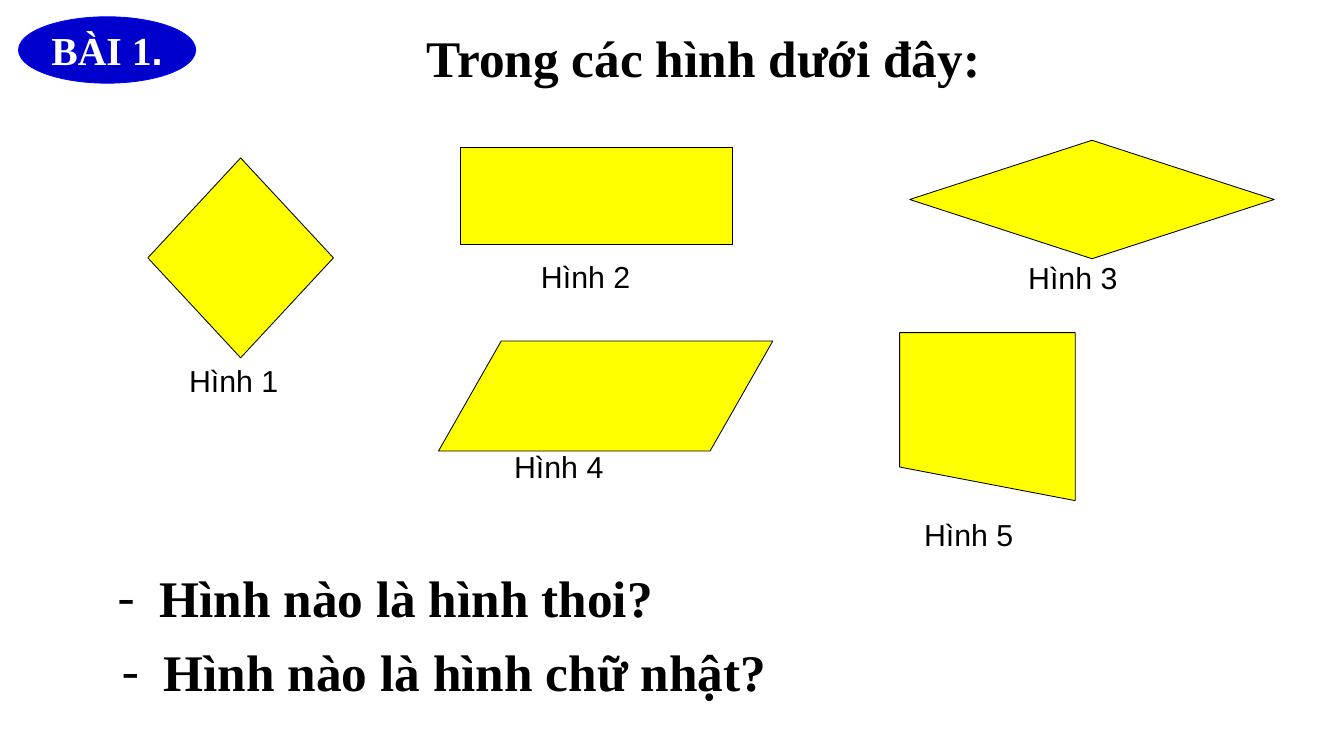
from lxml.etree import SubElement
from pptx import Presentation
from pptx.dml.color import RGBColor
from pptx.enum.shapes import MSO_SHAPE
from pptx.enum.text import MSO_ANCHOR, PP_ALIGN
from pptx.oxml.ns import qn
from pptx.util import Inches, Pt

COLORS = {"figure": "FFFF00", "ink": "000000", "badge": "0000CC",
          "badge_edge": "0000FF", "badge_text": "FFFFFF"}
FORMATS = {
    "label": {"size": Pt(26), "name": "Arial", "bold": False},
    "heading": {"size": Pt(44), "name": "Times New Roman", "bold": True},
    "badge": {"size": Pt(34), "name": "Times New Roman", "bold": True},
    "badge_dot": {"size": Pt(34), "name": "Arial", "bold": True},
}
MARGINS = {"margin_left": Inches(0.14), "margin_right": Inches(0.14),
           "margin_top": Inches(0.07), "margin_bottom": Inches(0.07)}


def set_all(target, values):
    for name, value in values.items():
        setattr(target, name, value)


class LessonSlide:
    """Holds the style and the current slide."""

    def __init__(self, deck):
        self.slide = deck.slides.add_slide(deck.slide_layouts[6])

    def color(self, name):
        return RGBColor.from_string(COLORS[name])

    def figure(self, kind, place, fill="figure", edge="ink"):
        figure = self.slide.shapes.add_shape(kind, *map(Inches, place))
        figure.shadow.inherit = False
        figure.fill.solid()
        figure.fill.fore_color.rgb = self.color(fill)
        figure.line.color.rgb = self.color(edge)
        figure.line.width = Pt(0.75)
        return figure

    def fill_text(self, frame, runs, align=PP_ALIGN.LEFT, ink="ink", wrap=True):
        """Fill a text frame with one paragraph of (text, format name) runs."""
        set_all(frame, {**MARGINS, "word_wrap": wrap})
        paragraph = frame.paragraphs[0]
        paragraph.alignment = align
        for text, style in runs:
            run = paragraph.add_run()
            run.text = text
            set_all(run.font, FORMATS[style])
            run.font.color.rgb = self.color(ink)
        return paragraph

    def text(self, place, words, style, align=PP_ALIGN.LEFT):
        box = self.slide.shapes.add_textbox(*map(Inches, place))
        return self.fill_text(box.text_frame, [(words, style)], align)

    def question(self, left, top, words):
        """Add a question behind a hanging dash."""
        paragraph = self.text((left, top, 11, 0.89), words, "heading")
        props = paragraph._p.get_or_add_pPr()
        props.set("marL", str(Inches(0.5)))
        props.set("indent", str(-Inches(0.5)))
        SubElement(props, qn("a:buFont"), typeface="Times New Roman")
        SubElement(props, qn("a:buChar"), char="-")

    def badge(self, place, runs):
        badge = self.figure(MSO_SHAPE.OVAL, place, "badge", "badge_edge")
        badge.text_frame.vertical_anchor = MSO_ANCHOR.MIDDLE
        self.fill_text(badge.text_frame, runs, PP_ALIGN.CENTER, "badge_text", False)


def main():
    deck = Presentation()
    set_all(deck, {"slide_width": Inches(16), "slide_height": Inches(9)})
    lesson = LessonSlide(deck)

    lesson.figure(MSO_SHAPE.FLOWCHART_DECISION, (1.76, 1.88, 2.21, 2.38))
    lesson.figure(MSO_SHAPE.RECTANGLE, (5.48, 1.76, 3.24, 1.15))
    lesson.figure(MSO_SHAPE.FLOWCHART_DECISION, (10.83, 1.67, 4.34, 1.41))
    parallelogram = lesson.figure(MSO_SHAPE.PARALLELOGRAM, (5.22, 4.06, 3.98, 1.31))
    parallelogram.adjustments[0] = 0.57
    trapezoid = lesson.figure(MSO_SHAPE.FLOWCHART_MANUAL_INPUT, (10.71, 3.96, 2.09, 2))
    trapezoid.rotation = 180
    trapezoid._element.spPr.xfrm.set("flipH", "1")

    label_corners = [(2.11, 4.24), (6.3, 3), (12.1, 3.02), (5.98, 5.26), (10.86, 6.08)]
    for number, corner in enumerate(label_corners, 1):
        lesson.text((*corner, 1.78, 0.58), f"Hình {number}", "label")

    lesson.badge((0.22, 0.2, 2.11, 0.79), [("BÀI 1", "badge"), (".", "badge_dot")])
    lesson.text((2.34, 0.24, 12.08, 0.89), "Trong các hình dưới đây:",
                "heading", PP_ALIGN.CENTER)
    lesson.question(1.26, 6.67, "Hình nào là hình thoi?")
    lesson.question(1.31, 7.55, "Hình nào là hình chữ nhật?")
    deck.save("out.pptx")


if __name__ == "__main__":
    main()
